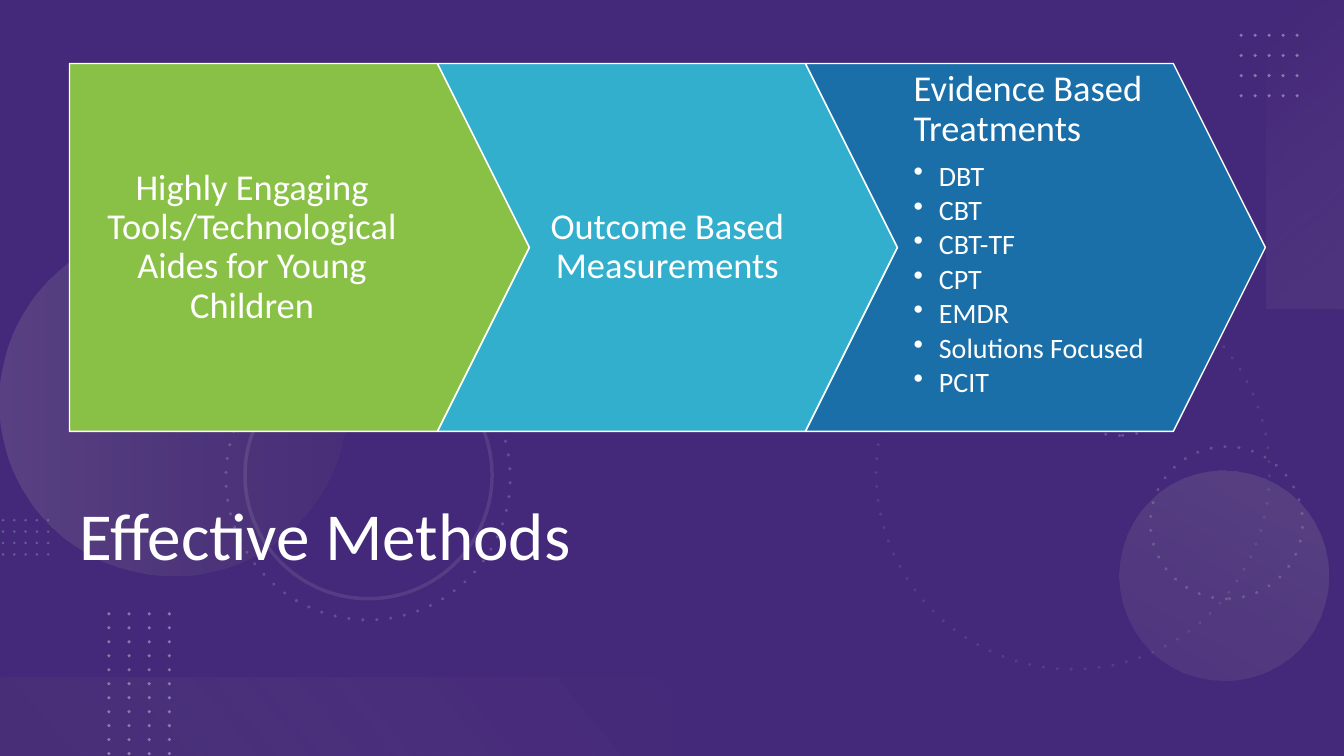
from lxml import etree
from pptx import Presentation
from pptx.dml.color import RGBColor
from pptx.enum.dml import MSO_LINE
from pptx.enum.shapes import MSO_CONNECTOR, MSO_SHAPE
from pptx.enum.text import MSO_ANCHOR, PP_ALIGN
from pptx.oxml.ns import qn
from pptx.util import Inches, Pt

RECTANGLE, ELLIPSE = MSO_SHAPE.RECTANGLE, MSO_SHAPE.OVAL
PENTAGON, CHEVRON = MSO_SHAPE.PENTAGON, MSO_SHAPE.CHEVRON
STRAIGHT, DOTTED = MSO_CONNECTOR.STRAIGHT, MSO_LINE.ROUND_DOT
LEFT, CENTER = PP_ALIGN.LEFT, PP_ALIGN.CENTER
TOP, MIDDLE = MSO_ANCHOR.TOP, MSO_ANCHOR.MIDDLE

FONT = "Calibri"
COLORS = {
    "slate": "44546A", "purple": "440287", "pale": "EFEFEF", "mist": "F5F4F4",
    "silver": "AEABAB", "gray": "757070", "steel": "8296B0", "white": "FFFFFF",
    "green": "88C145", "teal": "33AFCE", "blue": "1A6FA9",
}
TREATMENTS = ["DBT", "CBT", "CBT-TF", "CPT", "EMDR", "Solutions Focused", "PCIT"]


def rgb(name):
    return RGBColor.from_string(COLORS[name])


def set_alpha(color_parent, percent):
    color = next(color_parent.iter(qn("a:srgbClr")))
    etree.SubElement(color, qn("a:alpha"), val=str(percent * 1000))


def add_shape(slide, kind, box, fill=None, rotation=0):
    shape = slide.shapes.add_shape(kind, *(Inches(length) for length in box))
    shape.shadow.inherit = False
    shape.rotation = rotation
    shape.line.fill.background()
    if fill:
        shape.fill.solid()
        shape.fill.fore_color.rgb = rgb(fill)
    else:
        shape.fill.background()
    return shape


def style_line(shape, color, width, alpha=100, dotted=False):
    line = shape.line
    line.color.rgb = rgb(color)
    line.width = Pt(width)
    outline = shape._element.spPr.find(qn("a:ln"))
    if alpha < 100:
        set_alpha(outline, alpha)
    if dotted:
        line.dash_style = DOTTED
        outline.find(qn("a:prstDash")).set("val", "dot")
        outline.set("cap", "rnd")


def add_gradient_shape(slide, kind, box, rotation, angle, stops):
    """Stops are (position %, colour, opacity %)."""
    shape = add_shape(slide, kind, box, rotation=rotation)
    properties = shape._element.spPr
    gradient = etree.Element(qn("a:gradFill"), rotWithShape="1")
    stop_list = etree.SubElement(gradient, qn("a:gsLst"))
    for position, color, alpha in stops:
        stop = etree.SubElement(stop_list, qn("a:gs"), pos=str(position * 1000))
        etree.SubElement(stop, qn("a:srgbClr"), val=COLORS[color])
        set_alpha(stop, alpha)
    etree.SubElement(gradient, qn("a:lin"), ang=str(angle * 60000), scaled="0")
    properties.replace(properties.find(qn("a:noFill")), gradient)


def add_ring(slide, left, top, size, rotation, alpha, dotted=True):
    ring = add_shape(slide, ELLIPSE, (left, top, size, size), rotation=rotation)
    style_line(ring, "pale", 2.5, alpha, dotted)


def add_dot_line(slide, start, end, color, width, alpha):
    ends = (Inches(length) for length in (*start, *end))
    connector = slide.shapes.add_connector(STRAIGHT, *ends)
    style_line(connector, color, width, alpha, dotted=True)
    etree.SubElement(connector._element.spPr, qn("a:effectLst"))


def set_frame(shape, margins, anchor):
    frame = shape.text_frame
    frame.word_wrap = True
    frame.vertical_anchor = anchor
    (frame.margin_left, frame.margin_top,
     frame.margin_right, frame.margin_bottom) = (Inches(margin) for margin in margins)
    return frame


def write(paragraph, text, size, align=LEFT, space_before=0, bullet=False):
    paragraph.alignment = align
    paragraph.line_spacing = 0.9
    paragraph.space_before = Pt(space_before)
    run = paragraph.add_run()
    run.text = text
    run.font.name = FONT
    run.font.size = Pt(size)
    run.font.color.rgb = rgb("white")
    if bullet:
        properties = paragraph._p.get_or_add_pPr()
        properties.set("lvl", "1")
        properties.set("marL", str(Inches(0.25)))
        properties.set("indent", str(Inches(-0.25)))
        etree.SubElement(properties, qn("a:buChar"), char="•")


def add_decoration(slide):
    overlay = add_shape(slide, RECTANGLE, (0, 0, 13.33, 7.5), "purple")
    set_alpha(overlay._element.spPr, 53)

    add_ring(slide, 8.69, 2.74, 3.9, 75, 10)
    add_ring(slide, 11.41, 4.43, 1.51, 270, 20)
    add_gradient_shape(slide, ELLIPSE, (0, 2.27, 3.44, 3.44), 270, 90,
                       [(0, "silver", 20), (100, "gray", 10)])
    add_gradient_shape(slide, ELLIPSE, (11.1, 4.67, 2.08, 2.08), 210, 90,
                       [(0, "silver", 10), (100, "silver", 20)])
    add_ring(slide, 2.24, 3.33, 2.82, 75, 20)
    add_ring(slide, 2.43, 3.49, 2.45, 75, 10, dotted=False)
    add_gradient_shape(slide, RECTANGLE, (11.42, 1.14, 3.06, 0.78), 270, 140,
                       [(0, "mist", 0), (100, "silver", 10)])
    add_ring(slide, 10.35, 2.81, 1.51, 270, 20)
    add_gradient_shape(slide, RECTANGLE, (0, 6.72, 6.67, 0.78), 180, 140,
                       [(0, "gray", 10), (10, "gray", 10), (100, "pale", 0)])

    for index in range(4):
        top_right = 0.35 + 0.2 * index
        add_dot_line(slide, (12.31, top_right), (12.91, top_right), "pale", 2.5, 40)
        left_edge = 5.5 - 0.113 * index
        add_dot_line(slide, (0.03, left_edge), (0.5, left_edge), "steel", 2, 50)
        bottom = 1.68 - 0.2 * index
        add_dot_line(slide, (bottom, 6.09), (bottom, 7.5), "pale", 2.5, 40)


def add_title(slide, text):
    box = (Inches(length) for length in (0.69, 4.94, 11.73, 1.73))
    frame = set_frame(slide.shapes.add_textbox(*box), (0.1, 0.05, 0.1, 0.05), TOP)
    write(frame.paragraphs[0], text, 48)


def add_step(slide, index, kind, color, heading, bullets=()):
    step = add_shape(slide, kind, (0.69 + 3.65 * index, 0.63, 4.56, 3.65), color)
    step.adjustments[0] = 0.25
    style_line(step, "white", 1)
    right_margin = 0.64 if kind == PENTAGON else 0.16
    frame = set_frame(step, (0.16, 0.07, right_margin, 0.07),
                      TOP if bullets else MIDDLE)
    write(frame.paragraphs[0], heading, 26, align=LEFT if bullets else CENTER)
    for number, bullet in enumerate(bullets):
        write(frame.add_paragraph(), bullet, 20, bullet=True,
              space_before=3 if number else 9.1)


def main():
    presentation = Presentation()
    presentation.slide_width = Inches(13.33)
    presentation.slide_height = Inches(7.5)
    slide = presentation.slides.add_slide(presentation.slide_layouts[6])
    background = slide.background.fill
    background.solid()
    background.fore_color.rgb = rgb("slate")

    add_decoration(slide)
    add_title(slide, "Effective Methods")
    steps = [
        (PENTAGON, "green",
         "Highly Engaging Tools/Technological Aides for Young Children"),
        (CHEVRON, "teal", "Outcome Based Measurements"),
        (CHEVRON, "blue", "Evidence Based Treatments", TREATMENTS),
    ]
    for index, step in enumerate(steps):
        add_step(slide, index, *step)
    presentation.save("out.pptx")


if __name__ == "__main__":
    main()
